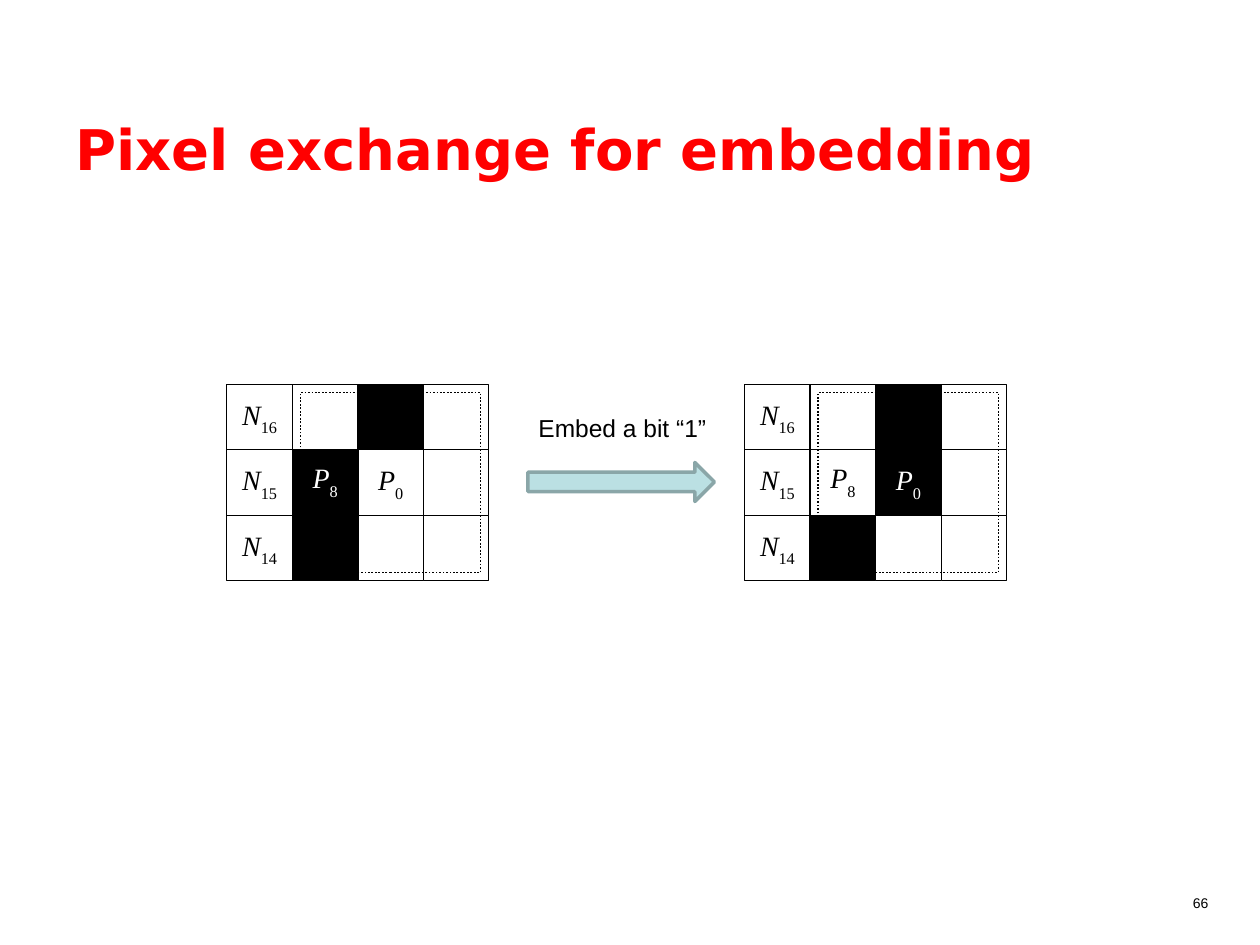
from pptx import Presentation
from pptx.dml.color import RGBColor
from pptx.enum.dml import MSO_LINE
from pptx.enum.shapes import MSO_SHAPE
from pptx.enum.text import MSO_ANCHOR, MSO_AUTO_SIZE, PP_ALIGN
from pptx.util import Inches, Pt

BLACK = RGBColor(0, 0, 0)
WHITE = RGBColor(255, 255, 255)
RED = RGBColor(255, 0, 0)
TEAL = RGBColor(0xBB, 0xE0, 0xE3)
SLATE = RGBColor(0x8A, 0xA6, 0xA8)

CELL = 0.52
TOP = 3.05
LABELS = [["N16", "", "", ""], ["N15", "P8", "P0", ""], ["N14", "", "", ""]]
BEFORE = ["..#.", ".#..", ".#.."]
AFTER = ["..#.", "..#.", ".#.."]


def place(shapes, kind, box, fill, line, width):
    shape = shapes.add_shape(kind, *map(Inches, box))
    shape.shadow.inherit = False
    if fill is None:
        shape.fill.background()
    else:
        shape.fill.solid()
        shape.fill.fore_color.rgb = fill
    shape.line.color.rgb = line
    shape.line.width = Pt(width)
    return shape


def style(para, face, size, color, align=PP_ALIGN.CENTER):
    para.alignment = align
    font = para.font
    font.name, font.size, font.color.rgb = face, Pt(size), color


def write(cell, label, color):
    frame = cell.text_frame
    frame.margin_left = frame.margin_right = 0
    frame.margin_top = 0
    frame.margin_bottom = Inches(0.03 if label == "P8" else 0)
    frame.vertical_anchor = MSO_ANCHOR.MIDDLE
    para = frame.paragraphs[0]
    style(para, "Times New Roman", 16, color)
    base, sub = para.add_run(), para.add_run()
    base.text, sub.text = label[0], label[1:]
    base.font.italic = True
    sub._r.get_or_add_rPr().set("baseline", "-30000")


def draw_grid(slide, left, top, size, bits):
    shapes = slide.shapes.add_group_shape().shapes
    for row, marks in enumerate(bits):
        for col, mark in enumerate(marks):
            fill, ink = (BLACK, WHITE) if mark == "#" else (WHITE, BLACK)
            box = left + col * size, top + row * size, size, size
            cell = place(shapes, MSO_SHAPE.RECTANGLE, box, fill, BLACK, 0.75)
            if LABELS[row][col]:
                write(cell, LABELS[row][col], ink)
    inset = size / 8
    side = 3 * size - 2 * inset
    box = left + size + inset, top + inset, side, side
    frame = place(shapes, MSO_SHAPE.RECTANGLE, box, None, BLACK, 1)
    frame.line.dash_style = MSO_LINE.ROUND_DOT


def draw_text(slide, box, text, size):
    frame = slide.shapes.add_textbox(*map(Inches, box)).text_frame
    frame.word_wrap = True
    frame.vertical_anchor = MSO_ANCHOR.MIDDLE
    frame.text = text
    style(frame.paragraphs[0], "Arial", size, BLACK)


def draw_step(slide, left, top, width):
    draw_text(slide, (left, top, width, 0.39), "Embed a bit “1”", 14)
    box = left + 0.15, top + 0.47, width - 0.32, 0.31
    place(slide.shapes, MSO_SHAPE.RIGHT_ARROW, box, TEAL, SLATE, 2)


def draw_title(slide, left, top, width, height):
    title = slide.shapes.title
    title.left, title.top = Inches(left), Inches(top)
    title.width, title.height = Inches(width), Inches(height)
    frame = title.text_frame
    frame.text = "Pixel exchange for embedding"
    frame.auto_size = MSO_AUTO_SIZE.NONE
    frame.vertical_anchor = MSO_ANCHOR.TOP
    para = frame.paragraphs[0]
    style(para, "DejaVu Sans", 32, RED, PP_ALIGN.LEFT)
    para.font.bold = True


def main():
    deck = Presentation()
    deck.slide_width, deck.slide_height = Inches(10), Inches(7.5)
    slide = deck.slides.add_slide(deck.slide_layouts[5])
    draw_title(slide, 0.5, 0.86, 9, 1.17)
    draw_grid(slide, 1.8, TOP, CELL, BEFORE)
    draw_step(slide, 4.04, TOP + 0.15, 1.8)
    draw_grid(slide, 5.91, TOP, CELL, AFTER)
    draw_text(slide, (9.3, 7.05, 0.46, 0.23), "66", 8)
    deck.save("out.pptx")


if __name__ == "__main__":
    main()
